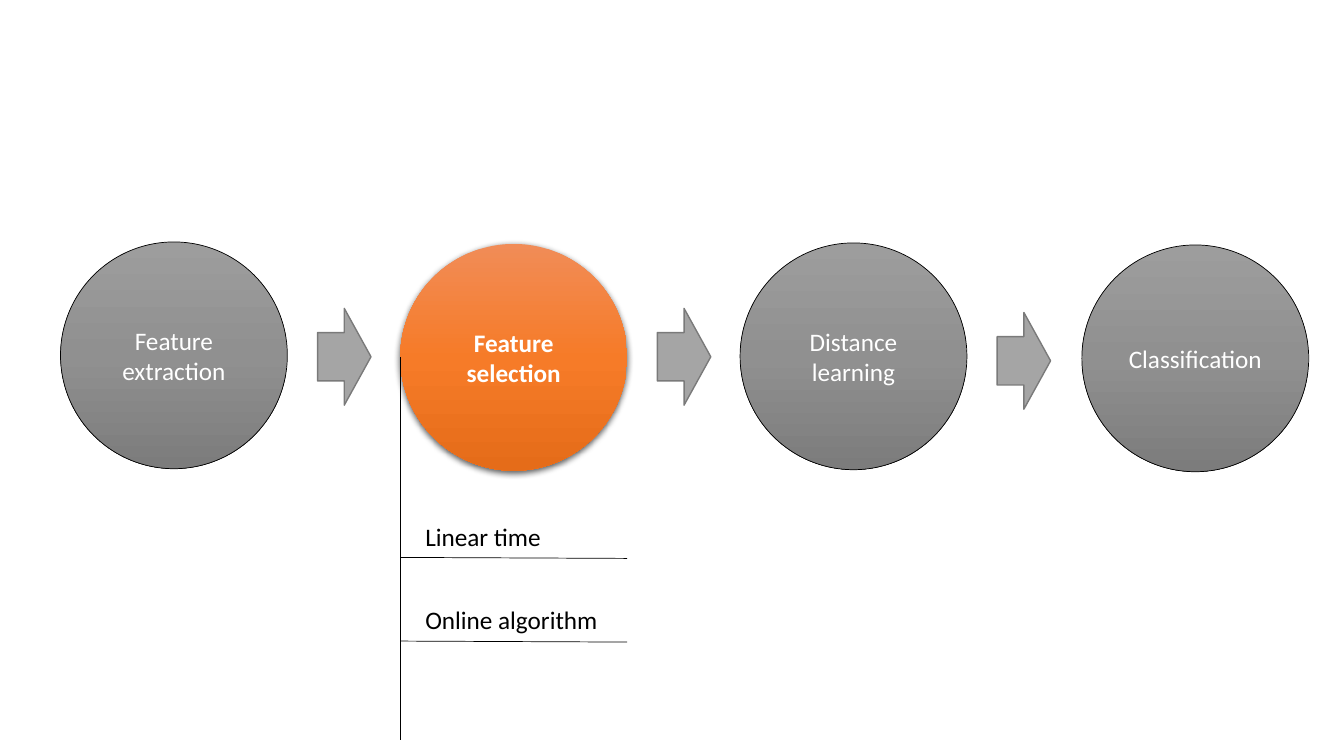
from copy import deepcopy
from dataclasses import dataclass

from lxml import etree
from pptx import Presentation
from pptx.dml.color import RGBColor
from pptx.enum.shapes import MSO_CONNECTOR, MSO_SHAPE
from pptx.enum.text import MSO_ANCHOR, MSO_AUTO_SIZE, PP_ALIGN
from pptx.oxml.ns import qn
from pptx.util import Inches, Pt

STEPS = [
    ("Feature extraction", 0, 0),
    ("Feature selection", 0, 0.02),
    ("Distance learning", 0, 0.01),
    ("Classification", 0.02, 0.03),
]
ARROWS = [0, 0, 0.04]
ACTIVE = 1
TRAITS = [("Linear time", 1.36), ("Online algorithm", 1.93)]

WIDE, HIGH = 13.33, 7.5
LEFT, TOP, SIZE, PITCH = 0.6, 2.4, 2.25, 3.37
ARROW_X, ARROW_Y, ARROW_W, ARROW_H = 3.15, 3.06, 0.53, 0.96
STEM_TOP, STEM_END = 3.54, 7.34
TEXT_TOP, TEXT_H, ROW, PAD = 5.12, 0.4, 0.83, 0.15
RULE_GAP, TILT = 0.41, 0.01

OVAL, ARROW = MSO_SHAPE.OVAL, MSO_SHAPE.RIGHT_ARROW
STRAIGHT = MSO_CONNECTOR.STRAIGHT
CENTER, START = PP_ALIGN.CENTER, PP_ALIGN.LEFT
MIDDLE, UPPER = MSO_ANCHOR.MIDDLE, MSO_ANCHOR.TOP


@dataclass(frozen=True)
class Theme:
    font: str = "Calibri"
    size: float = 18
    ink: str = "000000"
    light: str = "FFFFFF"
    arrow: str = "A5A5A5"
    edge: str = "7A7A7A"
    gray: tuple = ("9D9D9D", "909090", "7C7C7C")
    orange: tuple = ("F18C57", "F67B28", "E56C19")
    thin: float = 0.5
    thick: float = 1


LOOK = Theme()


def rgb(code):
    return RGBColor.from_string(code)


def stroke(line, color, width):
    line.color.rgb = rgb(color)
    line.width = Pt(width)


def write(shape, text, color=LOOK.ink, bold=False, align=START, anchor=UPPER):
    frame = shape.text_frame
    frame.vertical_anchor = anchor
    para = frame.paragraphs[0]
    para.alignment = align
    run = para.add_run()
    run.text = text
    font = run.font
    font.name, font.size, font.bold = LOOK.font, Pt(LOOK.size), bold
    font.color.rgb = rgb(color)


def blend(shape, colors):
    fill = shape.fill
    fill.gradient()
    fill.gradient_angle = 270
    stops = next(shape._element.spPr.iter(qn("a:gsLst")))
    stops.insert(1, deepcopy(stops[0]))
    for stop, color, place in zip(fill.gradient_stops, colors, (0, 0.5, 1)):
        stop.color.rgb = rgb(color)
        stop.position = place


def shade(shape):
    effects = shape._element.spPr.find(qn("a:effectLst"))
    drop = etree.SubElement(
        effects, qn("a:outerShdw"), blurRad=str(Pt(4.5)), dist=str(Pt(1.5)),
        dir="5400000", algn="ctr", rotWithShape="0")
    color = etree.SubElement(drop, qn("a:srgbClr"), val=LOOK.ink)
    etree.SubElement(color, qn("a:alpha"), val="63000")


def block(slide, kind, x, y, w, h):
    shape = slide.shapes.add_shape(kind, *map(Inches, (x, y, w, h)))
    shape.shadow.inherit = False
    return shape


def rule(slide, x1, y1, x2, y2):
    line = slide.shapes.add_connector(STRAIGHT, *map(Inches, (x1, y1, x2, y2)))
    stroke(line.line, LOOK.ink, LOOK.thin)
    etree.SubElement(line._element.spPr, qn("a:effectLst"))


def main():
    deck = Presentation()
    deck.slide_width, deck.slide_height = Inches(WIDE), Inches(HIGH)
    slide = deck.slides.add_slide(deck.slide_layouts[6])

    for i, (text, dx, dy) in enumerate(STEPS):
        live = i == ACTIVE
        disc = block(slide, OVAL, LEFT + i * PITCH + dx, TOP + dy, SIZE, SIZE)
        blend(disc, LOOK.orange if live else LOOK.gray)
        if live:
            disc.line.fill.background()
            shade(disc)
        else:
            stroke(disc.line, LOOK.ink, LOOK.thin)
        write(disc, text, color=LOOK.light, bold=live, align=CENTER, anchor=MIDDLE)

    for i, dy in enumerate(ARROWS):
        arrow = block(slide, ARROW, ARROW_X + i * PITCH, ARROW_Y + dy, ARROW_W, ARROW_H)
        arrow.fill.solid()
        arrow.fill.fore_color.rgb = rgb(LOOK.arrow)
        stroke(arrow.line, LOOK.edge, LOOK.thick)

    stem = LEFT + ACTIVE * PITCH
    rule(slide, stem, STEM_TOP, stem, STEM_END)
    for i, (text, width) in enumerate(TRAITS):
        y = TEXT_TOP + i * ROW
        rule(slide, stem, y + RULE_GAP, stem + SIZE, y + RULE_GAP + TILT)
        box = slide.shapes.add_textbox(*map(Inches, (stem + PAD, y, width, TEXT_H)))
        box.text_frame.word_wrap = False
        box.text_frame.auto_size = MSO_AUTO_SIZE.SHAPE_TO_FIT_TEXT
        write(box, text)

    deck.save("out.pptx")


if __name__ == "__main__":
    main()
